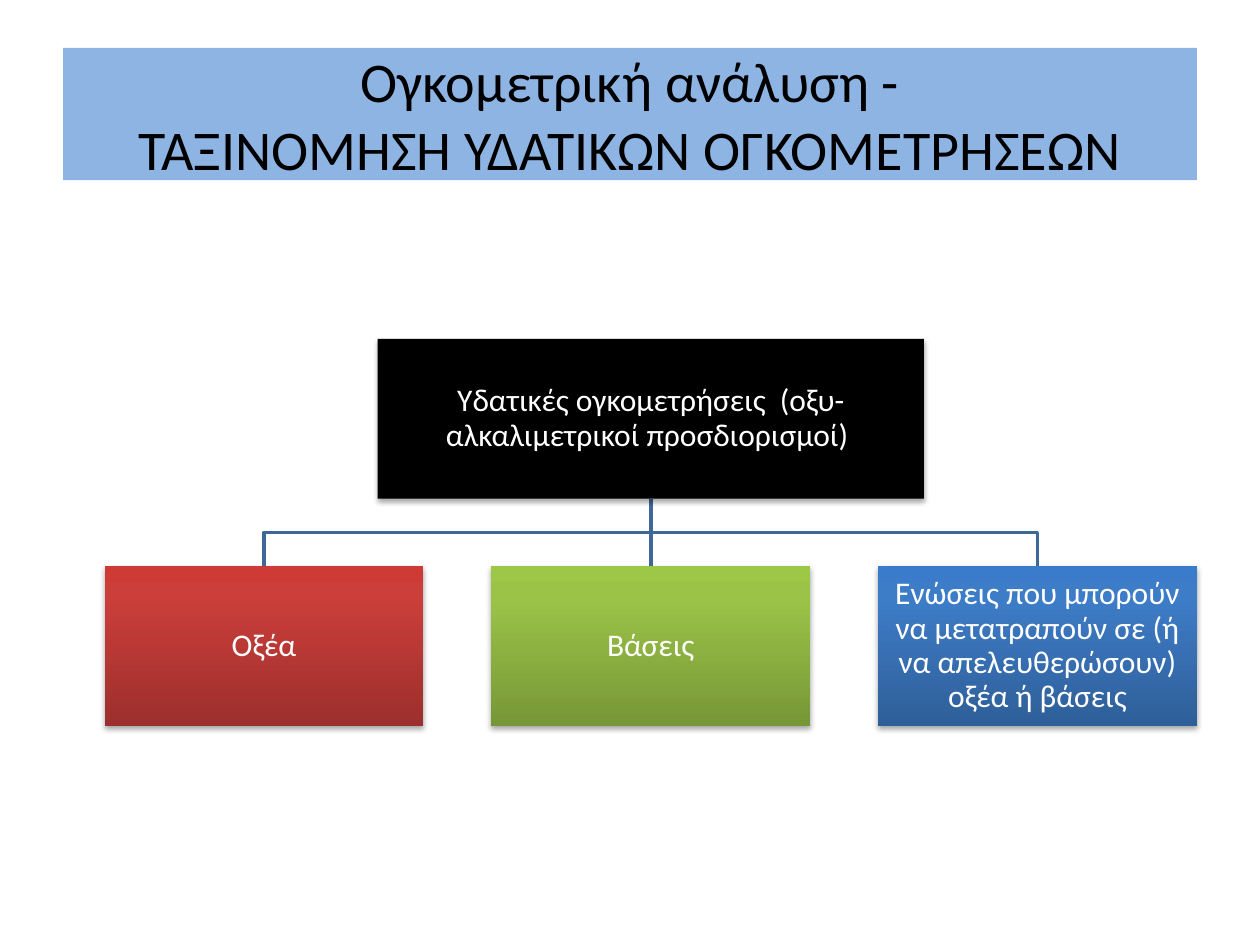
from lxml import etree
from pptx import Presentation
from pptx.dml.color import RGBColor
from pptx.enum.shapes import MSO_CONNECTOR, MSO_SHAPE
from pptx.enum.text import MSO_ANCHOR, PP_ALIGN
from pptx.oxml import parse_xml
from pptx.oxml.ns import nsdecls, qn
from pptx.util import Inches, Pt

RECTANGLE = MSO_SHAPE.RECTANGLE
STRAIGHT = MSO_CONNECTOR.STRAIGHT
MIDDLE = MSO_ANCHOR.MIDDLE
CENTER = PP_ALIGN.CENTER

FONT = "Calibri"
BLACK = RGBColor(0x00, 0x00, 0x00)
WHITE = RGBColor(0xFF, 0xFF, 0xFF)
TITLE_BLUE = RGBColor(0x8E, 0xB4, 0xE3)
BRANCH_BLUE = RGBColor(0x3F, 0x67, 0x97)
RED_SHADES = (RGBColor(0x9C, 0x2F, 0x2D), RGBColor(0xCB, 0x3E, 0x3A), RGBColor(0xCE, 0x3B, 0x37))
GREEN_SHADES = (RGBColor(0x77, 0x97, 0x37), RGBColor(0x9B, 0xC3, 0x48), RGBColor(0x9D, 0xC7, 0x46))
BLUE_SHADES = (RGBColor(0x2F, 0x5F, 0x99), RGBColor(0x3D, 0x7C, 0xC7), RGBColor(0x3A, 0x7C, 0xCB))
SHADE_STOPS = (0, 80, 100)

TITLE = "Ογκομετρική ανάλυση -\vΤΑΞΙΝΟΜΗΣΗ ΥΔΑΤΙΚΩΝ ΟΓΚΟΜΕΤΡΗΣΕΩΝ"
ROOT = "Υδατικές ογκομετρήσεις  (οξυ-αλκαλιμετρικοί προσδιορισμοί) "
CLASSES = [
    ("Οξέα", RED_SHADES),
    ("Βάσεις", GREEN_SHADES),
    ("Ενώσεις που μπορούν να μετατραπούν σε (ή να απελευθερώσουν) οξέα ή βάσεις", BLUE_SHADES),
]


def style_text(frame, size, color):
    frame.word_wrap = True
    frame.vertical_anchor = MIDDLE
    for paragraph in frame.paragraphs:
        paragraph.alignment = CENTER
        for run in paragraph.runs:
            run.font.name = FONT
            run.font.size = Pt(size)
            run.font.color.rgb = color


def add_title(slide, left, top, width, height):
    title = slide.shapes.title
    title.left, title.top, title.width, title.height = map(Inches, (left, top, width, height))
    title.fill.solid()
    title.fill.fore_color.rgb = TITLE_BLUE
    title.text_frame.text = TITLE
    style_text(title.text_frame, 32, BLACK)


def shade(node, shades):
    """Fill a node with a gradient that runs from its bottom to its top."""
    stops = "".join(
        f'<a:gs pos="{stop * 1000}"><a:srgbClr val="{color}"/></a:gs>'
        for stop, color in zip(SHADE_STOPS, shades)
    )
    gradient = parse_xml(
        f'<a:gradFill {nsdecls("a")} rotWithShape="1"><a:gsLst>{stops}</a:gsLst>'
        '<a:lin ang="16200000" scaled="0"/></a:gradFill>'
    )
    node._element.spPr.find(qn("a:prstGeom")).addnext(gradient)


def drop_shadow(node):
    node._element.spPr.append(parse_xml(
        f'<a:effectLst {nsdecls("a")}><a:outerShdw blurRad="{Pt(3.1)}" dist="{Pt(1.8)}" '
        'dir="5400000" rotWithShape="0"><a:srgbClr val="000000"><a:alpha val="35000"/>'
        '</a:srgbClr></a:outerShdw></a:effectLst>'
    ))


def add_node(slide, text, left, top, width, height, shades=None):
    node = slide.shapes.add_shape(RECTANGLE, *map(Inches, (left, top, width, height)))
    if shades:
        shade(node, shades)
    else:
        node.fill.solid()
        node.fill.fore_color.rgb = BLACK
    node.line.fill.background()
    drop_shadow(node)
    frame = node.text_frame
    frame.margin_left = frame.margin_right = Inches(0.01)
    frame.margin_top = frame.margin_bottom = Inches(0.01)
    frame.text = text
    frame.paragraphs[0].line_spacing = 0.9
    style_text(frame, 18, WHITE)


def add_branch(slide, root_x, top, class_x, bottom):
    """Join the root to a class, with a bend halfway down where they are not aligned."""
    bend = (top + bottom) / 2
    root_x, top, class_x, bottom, bend = map(Inches, (root_x, top, class_x, bottom, bend))
    if abs(class_x - root_x) < Inches(0.01):
        branch = slide.shapes.add_connector(STRAIGHT, root_x, top, class_x, bottom)
        etree.SubElement(branch._element.spPr, qn("a:effectLst"))
    else:
        builder = slide.shapes.build_freeform(root_x, top)
        builder.add_line_segments([(root_x, bend), (class_x, bend), (class_x, bottom)], close=False)
        branch = builder.convert_to_shape()
        branch.fill.background()
        branch.shadow.inherit = False
    branch.line.color.rgb = BRANCH_BLUE
    branch.line.width = Pt(2)


def add_hierarchy(slide, left, top, width, height):
    node_height = height * 0.413
    class_top = top + height - node_height
    class_width = width * 0.292
    pitch = (width - class_width) / (len(CLASSES) - 1)
    root_width = width / 2
    root_x = left + width / 2
    class_lefts = [left + column * pitch for column in range(len(CLASSES))]

    for class_left in class_lefts:
        add_branch(slide, root_x, top + node_height, class_left + class_width / 2, class_top)
    add_node(slide, ROOT, root_x - root_width / 2, top, root_width, node_height)
    for class_left, (text, shades) in zip(class_lefts, CLASSES):
        add_node(slide, text, class_left, class_top, class_width, node_height, shades)


def main():
    presentation = Presentation()
    presentation.slide_width = Inches(10)
    presentation.slide_height = Inches(7.5)
    slide = presentation.slides.add_slide(presentation.slide_layouts[5])
    add_hierarchy(slide, 0.83, 2.69, 8.67, 3.07)
    add_title(slide, 0.5, 0.38, 9, 1.05)
    presentation.save("out.pptx")


if __name__ == "__main__":
    main()
